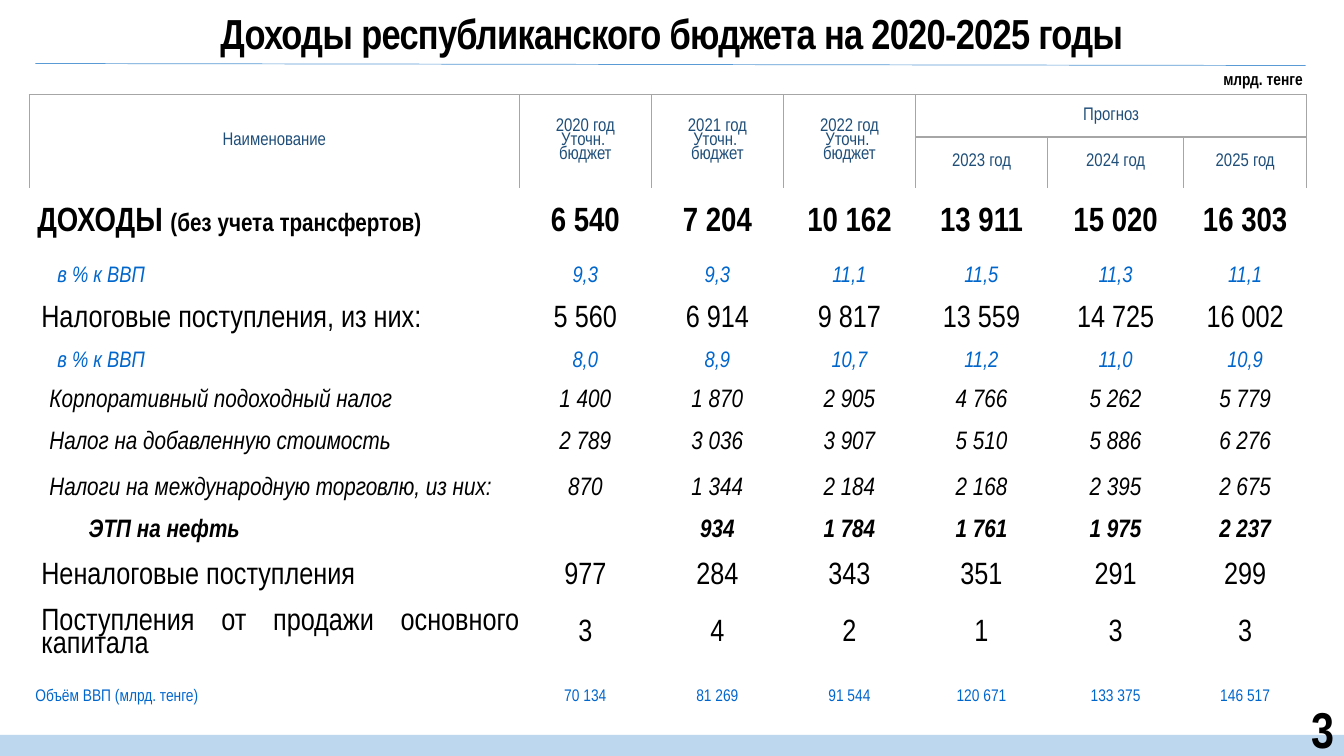
from dataclasses import dataclass

from lxml import etree
from pptx import Presentation
from pptx import util as u
from pptx.dml.color import RGBColor
from pptx.enum import shapes, text
from pptx.oxml import ns

FONT = "Arial Narrow"
BLACK, BLUE, NAVY, GRAY = "000000", "0066CC", "1F4E79", "A6A6A6"
SKY, PALE = "5B9BD5", "BDD7EE"
LEFT, CENTER, RIGHT = text.PP_ALIGN.LEFT, text.PP_ALIGN.CENTER, text.PP_ALIGN.RIGHT
JUSTIFY = text.PP_ALIGN.JUSTIFY

COLUMN_WIDTHS = [4.86, 1.31, 1.31, 1.31, 1.31, 1.35, 1.22]
HEADER_HEIGHTS = [0.42, 0.51]
HEADER_ROWS = len(HEADER_HEIGHTS)
BUDGET_YEARS = [2020, 2021, 2022]
FORECAST_YEARS = [2023, 2024, 2025]
FORECAST_COLUMN = 1 + len(BUDGET_YEARS)


@dataclass
class Style:
    size: float
    color: str = BLACK
    bold: bool = False
    italic: bool = False


@dataclass
class Row:
    height: float
    label: str
    indent: float
    style: Style
    values: list[str]
    note: str = ""


HEADER = Style(13, NAVY)
TOTAL = Style(24, bold=True)
SHARE = Style(16, BLUE, italic=True)
GROUP = Style(22)
TAX = Style(18, italic=True)
OIL = Style(18, bold=True, italic=True)
GDP = Style(12, BLUE)
GAP = Style(4)

ROWS = [
    Row(0.69, "ДОХОДЫ ", 0.08, TOTAL,
        ["6 540", "7 204", "10 162", "13 911", "15 020", "16 303"], "(без учета трансфертов)"),
    Row(0.38, "в % к ВВП", 0.28, SHARE, ["9,3", "9,3", "11,1", "11,5", "11,3", "11,1"]),
    Row(0.47, "Налоговые поступления, из них:", 0.12, GROUP,
        ["5 560", "6 914", "9 817", "13 559", "14 725", "16 002"]),
    Row(0.37, "в % к ВВП", 0.28, SHARE, ["8,0", "8,9", "10,7", "11,2", "11,0", "10,9"]),
    Row(0.41, "Корпоративный подоходный налог", 0.2, TAX,
        ["1 400", "1 870", "2 905", "4 766", "5 262", "5 779"]),
    Row(0.43, "Налог на добавленную стоимость", 0.2, TAX,
        ["2 789", "3 036", "3 907", "5 510", "5 886", "6 276"]),
    Row(0.47, "Налоги на международную торговлю, из них:", 0.2, TAX,
        ["870", "1 344", "2 184", "2 168", "2 395", "2 675"]),
    Row(0.37, "ЭТП на нефть", 0.59, OIL, ["", "934", "1 784", "1 761", "1 975", "2 237"]),
    Row(0.55, "Неналоговые поступления", 0.12, GROUP, ["977", "284", "343", "351", "291", "299"]),
    Row(0.58, "Поступления от продажи основного капитала", 0.12, GROUP,
        ["3", "4", "2", "1", "3", "3"]),
    Row(0.15, "", 0, GAP, [""] * 6),
    Row(0.36, "Объём ВВП (млрд. тенге)", 0.06, GDP,
        ["70 134", "81 269", "91 544", "120 671", "133 375", "146 517"]),
]


def rgb(color: str) -> RGBColor:
    return RGBColor.from_string(color)


def format_para(para, style: Style, align, spacing: float) -> None:
    para.alignment, para.line_spacing = align, spacing
    font = para.font
    font.name, font.size = FONT, u.Pt(style.size)
    font.bold, font.italic = style.bold, style.italic
    font.color.rgb = rgb(style.color)


def write_frame(frame, content: str, style: Style, align, spacing: float = 1) -> None:
    frame.word_wrap = True
    frame.auto_size = text.MSO_AUTO_SIZE.NONE
    frame.vertical_anchor = text.MSO_ANCHOR.MIDDLE
    frame.text = content
    format_para(frame.paragraphs[0], style, align, spacing)


def add_label(page, place: tuple, content: str, style: Style, spacing: float = 1) -> None:
    box = page.shapes.add_textbox(*map(u.Inches, place))
    write_frame(box.text_frame, content, style, RIGHT, spacing)


def fill_cell(cell, content: str, style: Style, align, indent: float = 0) -> None:
    cell.fill.background()
    cell.vertical_anchor = text.MSO_ANCHOR.MIDDLE
    cell.margin_left = u.Inches(indent)
    cell.margin_right = cell.margin_top = cell.margin_bottom = 0
    cell.text = content
    for para in cell.text_frame.paragraphs:
        format_para(para, style, align, 0.82)
        if not content:
            end = etree.SubElement(para._p, ns.qn("a:endParaRPr"))
            end.set("sz", str(int(style.size * 100)))


def add_borders(cell) -> None:
    properties = cell._tc.get_or_add_tcPr()
    for position, side in enumerate(("lnL", "lnR", "lnT", "lnB")):
        line = etree.Element(ns.qn(f"a:{side}"), w=str(u.Pt(1)))
        fill = etree.SubElement(line, ns.qn("a:solidFill"))
        etree.SubElement(fill, ns.qn("a:srgbClr"), val=GRAY)
        properties.insert(position, line)


def fill_header(table) -> None:
    for row in range(HEADER_ROWS):
        for column in range(len(COLUMN_WIDTHS)):
            fill_cell(table.cell(row, column), "", HEADER, CENTER)
            add_borders(table.cell(row, column))
    for column in range(FORECAST_COLUMN):
        table.cell(0, column).merge(table.cell(1, column))
    table.cell(0, FORECAST_COLUMN).merge(table.cell(0, len(COLUMN_WIDTHS) - 1))

    titles = ["Наименование"]
    titles += [f"{year} год\nУточн. \nбюджет" for year in BUDGET_YEARS]
    titles.append("Прогноз")
    for column, title in enumerate(titles):
        fill_cell(table.cell(0, column), title, HEADER, CENTER)
    for column, year in enumerate(FORECAST_YEARS, FORECAST_COLUMN):
        fill_cell(table.cell(1, column), f"{year} год", HEADER, CENTER)


def add_budget_table(page) -> None:
    heights = HEADER_HEIGHTS + [row.height for row in ROWS]
    frame = page.shapes.add_table(
        len(heights), len(COLUMN_WIDTHS), u.Inches(0.29), u.Inches(0.94),
        u.Inches(sum(COLUMN_WIDTHS)), u.Inches(sum(heights)))
    table = frame.table
    table.first_row = table.horz_banding = False
    for column, width in zip(table.columns, COLUMN_WIDTHS):
        column.width = u.Inches(width)
    for table_row, height in zip(table.rows, heights):
        table_row.height = u.Inches(height)

    fill_header(table)
    for index, row in enumerate(ROWS, HEADER_ROWS):
        label = table.cell(index, 0)
        fill_cell(label, row.label, row.style, JUSTIFY if row.label else LEFT, row.indent)
        if row.note:
            span = label.text_frame.paragraphs[0].add_run()
            span.text = row.note
            span.font.size = u.Pt(18)
        for column, value in enumerate(row.values, 1):
            fill_cell(table.cell(index, column), value, row.style, CENTER)


def add_title(page) -> None:
    title = page.shapes.title
    title.left = title.top = 0
    title.width, title.height = u.Inches(13.33), u.Inches(0.72)
    write_frame(title.text_frame, "Доходы республиканского бюджета на 2020-2025 годы",
                Style(30, bold=True), CENTER, 0.85)
    span = title.text_frame.paragraphs[0].runs[0]
    span.font._element.set("spc", "-50")


def add_band(page) -> None:
    band = page.shapes.add_shape(shapes.MSO_SHAPE.RECTANGLE, 0, u.Inches(7.29),
                                 u.Inches(13.33), u.Inches(0.21))
    band.shadow.inherit = False
    band.fill.solid()
    band.fill.fore_color.rgb = rgb(PALE)
    band.line.fill.background()


def add_title_rule(page) -> None:
    rule = page.shapes.add_connector(shapes.MSO_CONNECTOR.STRAIGHT, *map(
        u.Inches, (0.35, 0.63, 12.95, 0.65)))
    rule.line.color.rgb = rgb(SKY)
    rule.line.width = u.Pt(0.5)
    etree.SubElement(rule._element.spPr, ns.qn("a:effectLst"))


def main() -> None:
    deck = Presentation()
    deck.slide_width, deck.slide_height = u.Inches(13.33), u.Inches(7.5)
    page = deck.slides.add_slide(deck.slide_layouts[5])
    add_band(page)
    add_label(page, (11.9, 7.03, 1.43, 0.4), "3", Style(36, bold=True))
    add_title(page)
    add_budget_table(page)
    add_label(page, (11.2, 0.61, 1.82, 0.37), "млрд. тенге", Style(12, bold=True), 0.9)
    add_title_rule(page)
    deck.save("out.pptx")


if __name__ == "__main__":
    main()
